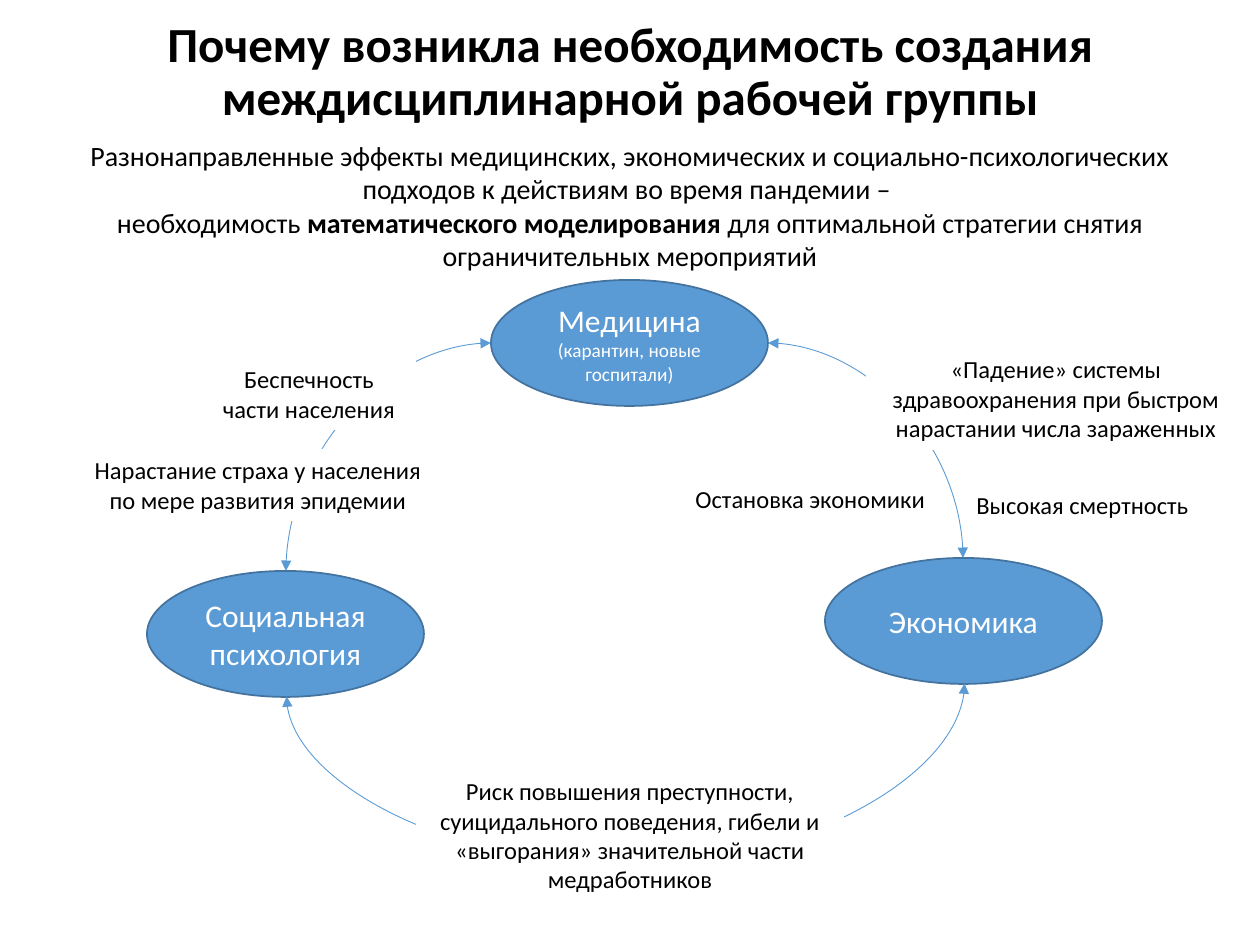
from dataclasses import dataclass
from typing import NamedTuple

from lxml import etree
from pptx import Presentation
from pptx import util as u
from pptx.dml.color import RGBColor
from pptx.enum import shapes, text
from pptx.oxml.ns import qn

EMU_PER_PX = u.Inches(1) // 126


@dataclass(frozen=True)
class Theme:
    font: str = "Calibri"
    ink: str = "000000"
    paper: str = "FFFFFF"
    node: str = "5B9BD5"
    node_line: str = "43739E"
    title: int = 28
    intro: int = 16
    node_text: int = 18
    node_note: int = 11
    label: int = 14
    outline: float = 1
    link: float = 0.5


THEME = Theme()


class Box(NamedTuple):
    x: int
    y: int
    w: int
    h: int


class Run(NamedTuple):
    text: str
    size: int
    bold: bool = False


class Node(NamedTuple):
    box: Box
    runs: list[Run]


class Label(NamedTuple):
    box: Box
    text: str
    covers_link: bool = True


class Link(NamedTuple):
    start: tuple[int, int]
    end: tuple[int, int]
    preset: str = "curvedConnector2"
    rotation: int = 0
    bend: int | None = None


NODE_W, NODE_H = 277, 126
NODES = [
    Node(Box(491, 280, NODE_W, NODE_H),
         [Run("Медицина ", THEME.node_text),
          Run("(карантин, новые госпитали)", THEME.node_note)]),
    Node(Box(825, 558, NODE_W, NODE_H), [Run("Экономика", THEME.node_text)]),
    Node(Box(147, 571, NODE_W, NODE_H),
         [Run("Социальная психология", THEME.node_text)]),
]

MEDICINE_ECONOMY = Link((768, 343), (963, 558))
MEDICINE_PSYCHOLOGY = Link((491, 343), (286, 571))
# A quarter turn lays this tall narrow connector along the bottom of the ring.
PSYCHOLOGY_ECONOMY = Link((632, 1029), (619, 351), "curvedConnector3", 90, -13)

# Back to front: white labels interrupt the links drawn before them.
RING = [
    MEDICINE_ECONOMY,
    Label(Box(683, 478, 257, 43), "Остановка экономики", False),
    Label(Box(964, 484, 239, 43), "Высокая смертность", False),
    Label(Box(866, 348, 380, 102),
          "«Падение» системы здравоохранения при быстром нарастании числа зараженных"),
    MEDICINE_PSYCHOLOGY,
    Label(Box(202, 358, 214, 72), "Беспечность части населения"),
    Label(Box(72, 449, 372, 72),
          "Нарастание страха у населения по мере развития эпидемии"),
    PSYCHOLOGY_ECONOMY,
    Label(Box(416, 770, 428, 131),
          "Риск повышения преступности, суицидального поведения, гибели и "
          "«выгорания» значительной части медработников"),
]


def px(*values: int) -> list[int]:
    return [u.Emu(v * EMU_PER_PX) for v in values]


def rgb(value: str) -> RGBColor:
    return RGBColor.from_string(value)


def write(sp, paragraphs: list[list[Run]], *, color: str = THEME.ink,
          align=text.PP_ALIGN.CENTER, anchor=text.MSO_ANCHOR.TOP,
          wrap: bool = True, grow: bool = False, spacing: float | None = None) -> None:
    tf = sp.text_frame
    tf.word_wrap = wrap
    tf.vertical_anchor = anchor
    tf.auto_size = (text.MSO_AUTO_SIZE.SHAPE_TO_FIT_TEXT if grow
                    else text.MSO_AUTO_SIZE.NONE)
    for i, runs in enumerate(paragraphs):
        p = tf.add_paragraph() if i else tf.paragraphs[0]
        p.alignment = align
        if spacing:
            p.line_spacing = spacing
        for run in runs:
            r = p.add_run()
            r.text = run.text
            r.font.name = THEME.font
            r.font.size = u.Pt(run.size)
            r.font.bold = run.bold
            r.font.color.rgb = rgb(color)


def add_filled(s, kind, box: Box, fill: str):
    sp = s.shapes.add_shape(kind, *px(*box))
    sp.shadow.inherit = False
    sp.fill.solid()
    sp.fill.fore_color.rgb = rgb(fill)
    sp.line.fill.background()
    return sp


def draw_node(s, node: Node) -> None:
    sp = add_filled(s, shapes.MSO_SHAPE.OVAL, node.box, THEME.node)
    sp.line.color.rgb = rgb(THEME.node_line)
    sp.line.width = u.Pt(THEME.outline)
    write(sp, [node.runs], color=THEME.paper, anchor=text.MSO_ANCHOR.MIDDLE)


def draw_label(s, label: Label) -> None:
    content = [[Run(label.text, THEME.label)]]
    if label.covers_link:
        sp = add_filled(s, shapes.MSO_SHAPE.RECTANGLE, label.box, THEME.paper)
        write(sp, content, grow=True)
    else:
        sp = s.shapes.add_textbox(*px(*label.box))
        write(sp, content, align=text.PP_ALIGN.LEFT, wrap=False, grow=True)


def draw_link(s, link: Link) -> None:
    """Curved connector with a triangle at both ends; bend is in box widths."""
    sp = s.shapes.add_connector(shapes.MSO_CONNECTOR.CURVE,
                                *px(*link.start, *link.end))
    sp.line.color.rgb = rgb(THEME.node)
    sp.line.width = u.Pt(THEME.link)
    props = sp._element.spPr
    geom = props.find(qn("a:prstGeom"))
    geom.set("prst", link.preset)
    if link.rotation:
        props.find(qn("a:xfrm")).set("rot", str(link.rotation * 60000))
    if link.bend is not None:
        guides = geom.find(qn("a:avLst"))
        if guides is None:
            guides = etree.SubElement(geom, qn("a:avLst"))
        etree.SubElement(guides, qn("a:gd"), name="adj1",
                         fmla=f"val {link.bend * 100000}")
    ln = props.find(qn("a:ln"))
    for end in ("a:headEnd", "a:tailEnd"):
        etree.SubElement(ln, qn(end), type="triangle")
    etree.SubElement(props, qn("a:effectLst"))


def main() -> None:
    prs = Presentation()
    prs.slide_width, prs.slide_height = px(1260, 945)
    s = prs.slides.add_slide(prs.slide_layouts[6])

    title = s.shapes.add_textbox(*px(0, 11, 1260, 124))
    write(title, [[Run("Почему возникла необходимость создания "
                       "междисциплинарной рабочей группы", THEME.title, True)]],
          anchor=text.MSO_ANCHOR.MIDDLE, spacing=0.9)

    intro = s.shapes.add_textbox(*px(51, 132, 1158, 149))
    write(intro, [
        [Run("Разнонаправленные эффекты медицинских, экономических и "
             "социально-психологических подходов к действиям во время пандемии – ",
             THEME.intro)],
        [Run("необходимость ", THEME.intro),
         Run("математического моделирования ", THEME.intro, True),
         Run("для оптимальной стратегии снятия ограничительных мероприятий",
             THEME.intro)],
    ], grow=True)

    for node in NODES:
        draw_node(s, node)
    for item in RING:
        if isinstance(item, Link):
            draw_link(s, item)
        else:
            draw_label(s, item)

    prs.save("out.pptx")


if __name__ == "__main__":
    main()
